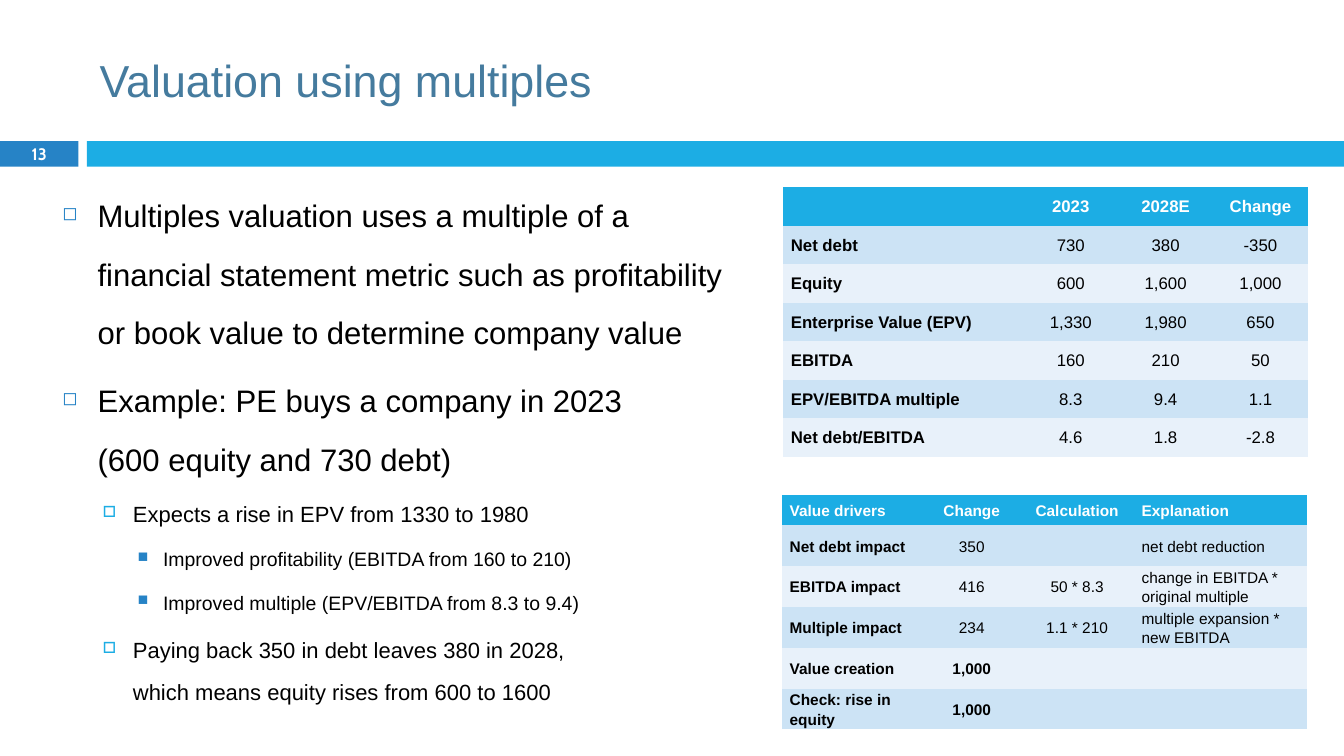
"""Build the slide on valuation using multiples."""
from lxml import etree
from pptx import Presentation
from pptx.dml.color import RGBColor
from pptx.enum.shapes import MSO_SHAPE
from pptx.enum.text import MSO_ANCHOR, PP_ALIGN
from pptx.oxml.ns import qn
from pptx.util import Cm, Pt

RECTANGLE = MSO_SHAPE.RECTANGLE
MIDDLE, TOP = MSO_ANCHOR.MIDDLE, MSO_ANCHOR.TOP
LEFT, CENTER = PP_ALIGN.LEFT, PP_ALIGN.CENTER
BLUE = RGBColor(0x26, 0x83, 0xC6)
SKY = RGBColor(0x1C, 0xAD, 0xE4)
STEEL = RGBColor(0x45, 0x7B, 0x9E)
BAND_DARK = RGBColor(0xCC, 0xE3, 0xF5)
BAND_LIGHT = RGBColor(0xE8, 0xF1, 0xFA)
BLACK = RGBColor(0x00, 0x00, 0x00)
WHITE = RGBColor(0xFF, 0xFF, 0xFF)
NO_STYLE = "{2D5ABB26-0587-4C30-8999-92F81FD0307C}"


def write(paragraph, text, size, color, bold=False, font="Arial"):
    """Put text in a paragraph and format its runs."""
    paragraph.text = text
    for run in paragraph.runs:
        run.font.name = font
        run.font.size = Pt(size)
        run.font.bold = bold
        run.font.color.rgb = color


def add_frame(left, top, width, height, anchor):
    """Add a wrapping text box and return its text frame."""
    box = slide.shapes.add_textbox(Cm(left), Cm(top), Cm(width), Cm(height))
    box.text_frame.word_wrap = True
    box.text_frame.vertical_anchor = anchor
    return box.text_frame


prs = Presentation()
prs.slide_width, prs.slide_height = Cm(33.87), Cm(19.05)
slide = prs.slides.add_slide(prs.slide_layouts[6])

for left, width, color in [(0, 1.98, BLUE), (2.19, 31.68, SKY)]:
    bar = slide.shapes.add_shape(RECTANGLE, Cm(left), Cm(3.56), Cm(width), Cm(0.64))
    bar.shadow.inherit = False
    bar.fill.solid()
    bar.fill.fore_color.rgb = color
    bar.line.fill.background()

title = add_frame(2.26, 0.64, 30.2, 2.74, MIDDLE)
write(title.paragraphs[0], "Valuation using multiples", 32, STEEL)

page_number = add_frame(0, 3.53, 1.98, 0.69, MIDDLE)
page_number.margin_top = page_number.margin_bottom = 0
page_number.paragraphs[0].alignment = CENTER
write(page_number.paragraphs[0], "13", 11.9, WHITE, True, "Cabin")

LEVELS = [
    {"size": 22.2, "margin": 0.89, "hang": 0.89, "before": 7,
     "bullet": "◻", "color": BLUE, "percent": 60},
    {"size": 15.7, "margin": 1.78, "hang": 0.76, "before": 5.5,
     "bullet": "□", "color": SKY, "percent": 70},
    {"size": 13.9, "margin": 2.54, "hang": 0.64, "before": 5,
     "bullet": "■", "color": BLUE, "percent": 75},
]
POINTS = [
    (0, "Multiples valuation uses a multiple of a financial statement metric "
        "such as profitability or book value to determine company value"),
    (0, "Example: PE buys a company in 2023\n(600 equity and 730 debt)"),
    (1, "Expects a rise in EPV from 1330 to 1980"),
    (2, "Improved profitability (EBITDA from 160 to 210)"),
    (2, "Improved multiple (EPV/EBITDA from 8.3 to 9.4)"),
    (1, "Paying back 350 in debt leaves 380 in 2028,\n"
        "which means equity rises from 600 to 1600"),
]
body = add_frame(1.32, 4.29, 17.48, 13.69, TOP)
for index, (level, text) in enumerate(POINTS):
    look = LEVELS[level]
    point = body.add_paragraph() if index else body.paragraphs[0]
    write(point, text, look["size"], BLACK)
    point.level = level
    point.line_spacing = 1.57
    point.space_before = Pt(look["before"])
    props = point._p.get_or_add_pPr()
    props.set("marL", str(Cm(look["margin"])))
    props.set("indent", str(-Cm(look["hang"])))
    bullet_color = etree.SubElement(props, qn("a:buClr"))
    etree.SubElement(bullet_color, qn("a:srgbClr"), val=str(look["color"]))
    etree.SubElement(props, qn("a:buSzPct"), val=str(look["percent"] * 1000))
    etree.SubElement(props, qn("a:buChar"), char=look["bullet"])

MULTIPLES = [
    ("", "2023", "2028E", "Change"),
    ("Net debt", "730", "380", "-350"),
    ("Equity", "600", "1,600", "1,000"),
    ("Enterprise Value (EPV)", "1,330", "1,980", "650"),
    ("EBITDA", "160", "210", "50"),
    ("EPV/EBITDA multiple", "8.3", "9.4", "1.1"),
    ("Net debt/EBITDA", "4.6", "1.8", "-2.8"),
]
DRIVERS = [
    ("Value drivers", "Change", "Calculation", "Explanation"),
    ("Net debt impact", "350", "", "net debt reduction"),
    ("EBITDA impact", "416", "50 * 8.3", "change in EBITDA * original multiple"),
    ("Multiple impact", "234", "1.1 * 210", "multiple expansion *\nnew EBITDA"),
    ("Value creation", "1,000", "", ""),
    ("Check: rise in equity", "1,000", "", ""),
]
TABLES = [
    {"rows": MULTIPLES, "left": 19.74, "top": 4.72, "size": 12,
     "widths": [6.05, 2.39, 2.39, 2.39], "heights": [0.97] * 7,
     "left_columns": {0}, "bold_rows": {0}},
    {"rows": DRIVERS, "left": 19.71, "top": 12.47, "size": 11,
     "widths": [3.56, 2.44, 2.87, 4.37], "heights": [0.76] + [1.03] * 5,
     "left_columns": {0, 3}, "bold_rows": {0, 4, 5}},
]
for plan in TABLES:
    widths, heights = plan["widths"], plan["heights"]
    table = slide.shapes.add_table(
        len(heights), len(widths), Cm(plan["left"]), Cm(plan["top"]),
        Cm(sum(widths)), Cm(sum(heights))).table
    table._tbl.tblPr.find(qn("a:tableStyleId")).text = NO_STYLE
    for column, width in zip(table.columns, widths):
        column.width = Cm(width)
    for r, values in enumerate(plan["rows"]):
        table.rows[r].height = Cm(heights[r])
        band = SKY if r == 0 else BAND_DARK if r % 2 else BAND_LIGHT
        for c, value in enumerate(values):
            cell = table.cell(r, c)
            cell.fill.solid()
            cell.fill.fore_color.rgb = band
            cell.vertical_anchor = MIDDLE
            cell.margin_left = cell.margin_right = Cm(0.19)
            cell.margin_top = cell.margin_bottom = 0
            entry = cell.text_frame.paragraphs[0]
            entry.alignment = LEFT if c in plan["left_columns"] else CENTER
            entry.line_spacing = Pt(14)
            entry.space_before = entry.space_after = Pt(2)
            write(entry, value, plan["size"], BLACK if r else WHITE,
                  c == 0 or r in plan["bold_rows"])

prs.save("out.pptx")
